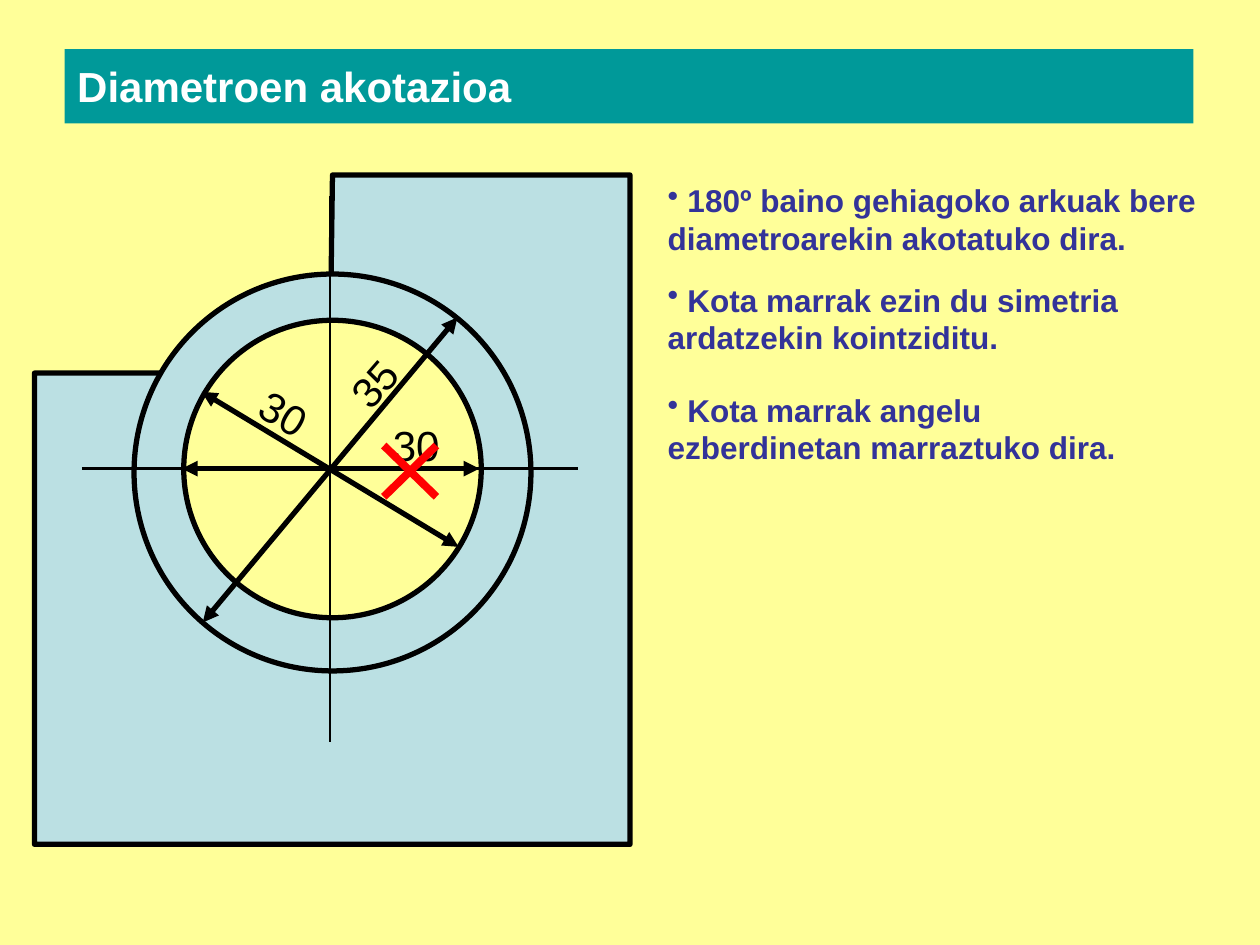
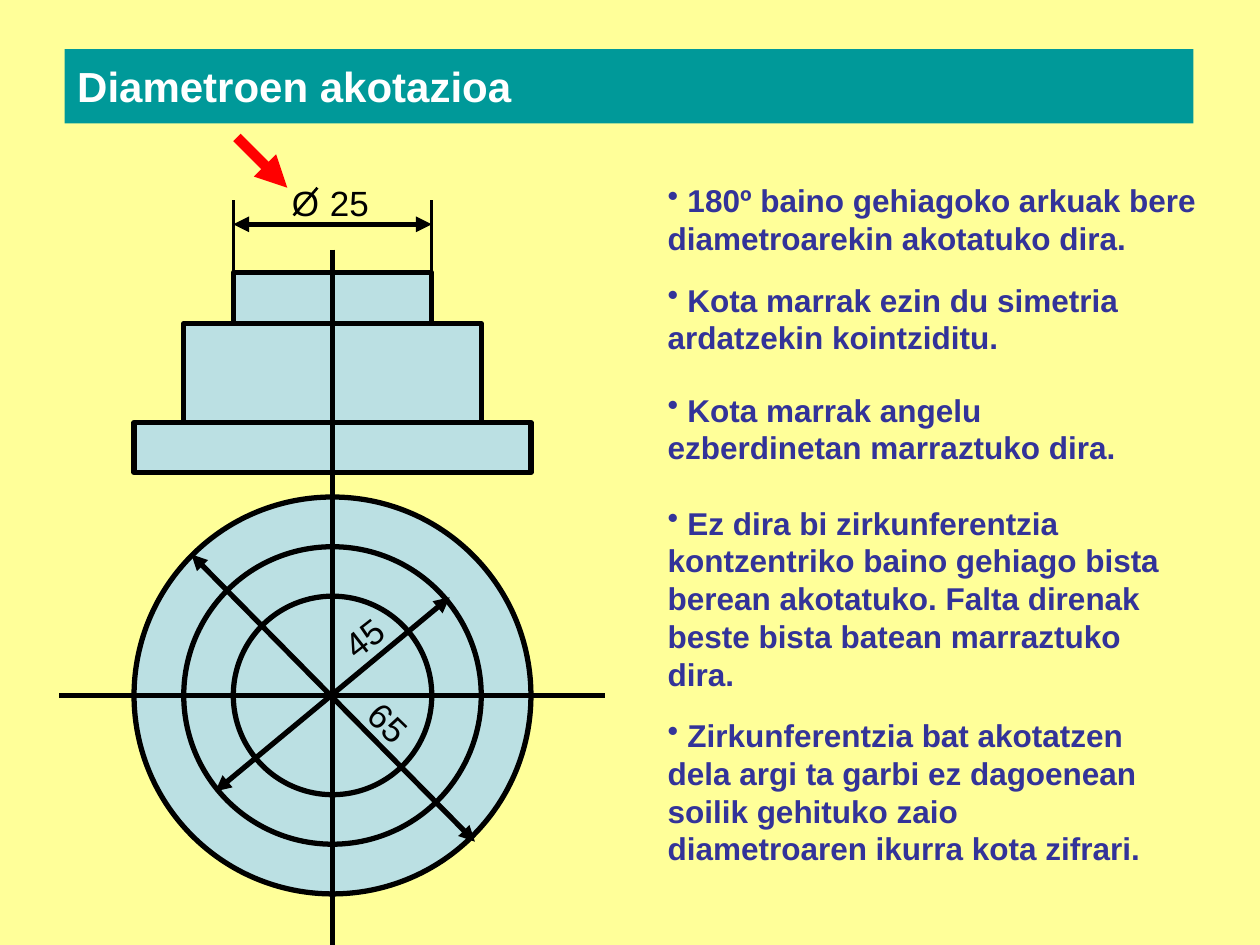
from lxml import etree
from pptx import Presentation
from pptx.dml.color import RGBColor
from pptx.enum.shapes import MSO_CONNECTOR, MSO_SHAPE
from pptx.enum.text import MSO_ANCHOR, MSO_AUTO_SIZE, PP_ALIGN
from pptx.oxml.ns import qn
from pptx.util import Pt

STRAIGHT = MSO_CONNECTOR.STRAIGHT
OVAL, RECTANGLE = MSO_SHAPE.OVAL, MSO_SHAPE.RECTANGLE
MIDDLE = MSO_ANCHOR.MIDDLE
FIT_SHAPE, NO_FIT = MSO_AUTO_SIZE.SHAPE_TO_FIT_TEXT, MSO_AUTO_SIZE.NONE
LEFT = PP_ALIGN.LEFT

CREAM = RGBColor(0xFF, 0xFF, 0x99)
TEAL = RGBColor(0x00, 0x99, 0x99)
PALE_BLUE = RGBColor(0xBB, 0xE0, 0xE3)
INDIGO = RGBColor(0x33, 0x33, 0x99)
RED = RGBColor(0xFF, 0x00, 0x00)
BLACK = RGBColor(0x00, 0x00, 0x00)
WHITE = RGBColor(0xFF, 0xFF, 0xFF)

FONT = "Arial"
THIN, THICK = 1.5, 3
TITLE = "Diametroen akotazioa"
TITLE_BAND = (36.9, 28, 645, 42.5)

# Text, top, width, height
NOTES = [
    ("180º baino gehiagoko arkuak bere diametroarekin akotatuko dira.", 100, 322.6, 51),
    ("Kota marrak ezin du simetria ardatzekin kointziditu.", 156.8, 326, 51),
    ("Kota marrak angelu ezberdinetan marraztuko dira.", 219.6, 298, 51),
    ("Ez dira bi zirkunferentzia kontzentriko baino gehiago bista berean "
     "akotatuko. Falta direnak beste bista batean marraztuko dira.", 284.2, 298, 116.6),
    ("Zirkunferentzia bat akotatzen dela argi ta garbi ez dagoenean soilik "
     "gehituko zaio diametroaren ikurra kota zifrari.", 405.6, 298, 94.4),
]
NOTES_LEFT = 374.4

# Slide 1: plate with a hole
PLATE_OUTLINE = [(188.9, 183), (190, 100), (360, 100), (360, 482.5), (19.7, 482.5),
                 (19.7, 213.2), (91, 213.2), (114.5, 225.4)]
RING = (190, 270, 226.8)  # centre x, centre y, diameter
HOLE = (190, 268, 170)
PLATE_AXES = [((188.7, 112.3), (188.7, 424)), ((46.8, 267.8), (330.5, 267.8))]
PLATE_DIMENSIONS = [((261.4, 181.4), (115.9, 355.7)),
                    ((115.2, 223.9), (262.1, 312.5)),
                    ((104, 267.8), (273.9, 267.8))]
# Text, left, top, width, height, rotation
PLATE_LABELS = [("35", 193, 200.9, 41, 36, 311),
                ("30", 141.8, 218.2, 41, 36, 30),
                ("30", 217.4, 236.2, 41, 36, 0)]
CROSS = (219.3, 254.6, 249.4, 283.9)  # left, top, right, bottom

# Slide 2: stepped turned part
PART_X, PLAN_Y = 190, 397.4
PLAN_DIAMETERS = [226.8, 170, 113.4]
STEPS_TOP = 155.6
STEPS = [(113.4, 29.4), (170, 56.6), (226.8, 28.4)]  # width, height
EXTENSION_TOP, EXTENSION_BOTTOM, SHAFT_DIMENSION_Y = 114.5, 157, 128.2
PLAN_DIMENSIONS = [((123.1, 452.2), (257, 341.3)), ((109.4, 316.8), (271.4, 481))]
PART_LABELS = [("45", 189.4, 348.5, 36.8, 31, 322),
               ("65", 203.8, 397.4, 36.8, 31, 44),
               ("25", 181.4, 100, 36.8, 31, 0),
               ("O", 159.8, 100, 30.4, 31, 0)]
DIAMETER_STROKE = ((167.8, 123.1), (181.4, 107.3))
POINTER = ((135.4, 78.5), (164.2, 107.3))
PART_AXES = [((33.8, PLAN_Y), (345.6, PLAN_Y)), ((PART_X, 142.6), (PART_X, 540))]


def points(*lengths):
    return [Pt(length) for length in lengths]


def add_span(para, text, size, colour, bold=False):
    span = para.add_run()
    span.text = text
    span.font.name, span.font.size, span.font.bold = FONT, Pt(size), bold
    span.font.color.rgb = colour


def add_page(deck):
    page = deck.slides.add_slide(deck.slide_layouts[5])
    title = page.shapes.title
    title.left, title.top, title.width, title.height = points(*TITLE_BAND)
    title.fill.solid()
    title.fill.fore_color.rgb = TEAL
    frame = title.text_frame
    frame.auto_size, frame.vertical_anchor = NO_FIT, MIDDLE
    para = frame.paragraphs[0]
    para.alignment = LEFT
    add_span(para, TITLE, 24, WHITE, bold=True)
    return page


def paint(shape, fill):
    shape.shadow.inherit = False
    shape.fill.solid()
    shape.fill.fore_color.rgb = fill
    shape.line.color.rgb = BLACK
    shape.line.width = Pt(THICK)


def add_circle(page, centre_x, centre_y, diameter, fill=PALE_BLUE):
    radius = diameter / 2
    circle = page.shapes.add_shape(
        OVAL, *points(centre_x - radius, centre_y - radius, diameter, diameter))
    paint(circle, fill)


def add_line(page, start, end, width=THICK, colour=BLACK, arrows=()):
    """Arrows names the ends with a triangle: headEnd at start, tailEnd at end."""
    line = page.shapes.add_connector(STRAIGHT, *points(*start, *end))
    line.line.color.rgb = colour
    line.line.width = Pt(width)
    outline = line.line._get_or_add_ln()
    for arrow in arrows:
        etree.SubElement(outline, qn("a:" + arrow), type="triangle")
    etree.SubElement(line._element.spPr, qn("a:effectLst"))


def add_dimension(page, start, end):
    add_line(page, start, end, arrows=("headEnd", "tailEnd"))


def add_text_box(page, left, top, width, height, wrap):
    box = page.shapes.add_textbox(*points(left, top, width, height))
    box.text_frame.word_wrap = wrap
    box.text_frame.auto_size = FIT_SHAPE
    return box


def add_label(page, size, text, left, top, width, height, rotation):
    box = add_text_box(page, left, top, width, height, False)
    box.rotation = rotation
    add_span(box.text_frame.paragraphs[0], text, size, BLACK)


def add_notes(page, notes):
    for text, top, width, height in notes:
        box = add_text_box(page, NOTES_LEFT, top, width, height, True)
        para = box.text_frame.paragraphs[0]
        add_span(para, " " + text, 18, INDIGO, bold=True)
        properties = para._p.get_or_add_pPr()
        properties.set("marL", "0")
        properties.set("indent", str(-Pt(8.64)))
        colour = etree.SubElement(properties, qn("a:buClr"))
        etree.SubElement(colour, qn("a:srgbClr"), val=str(INDIGO))
        etree.SubElement(properties, qn("a:buChar"), char="•")


def draw_plate(page):
    outline = [points(*corner) for corner in PLATE_OUTLINE]
    builder = page.shapes.build_freeform(*outline[0])
    builder.add_line_segments(outline[1:], close=True)
    paint(builder.convert_to_shape(), PALE_BLUE)
    add_circle(page, *RING)
    add_circle(page, *HOLE, fill=CREAM)
    for start, end in PLATE_AXES:
        add_line(page, start, end, THIN)
    for start, end in PLATE_DIMENSIONS:
        add_dimension(page, start, end)
    for label in PLATE_LABELS:
        add_label(page, 24, *label)
    left, top, right, bottom = CROSS
    add_line(page, (left, top), (right, bottom), 4.5, RED)
    add_line(page, (right, top), (left, bottom), 4.5, RED)


def draw_turned_part(page):
    for diameter in PLAN_DIAMETERS:
        add_circle(page, PART_X, PLAN_Y, diameter)
    top = STEPS_TOP
    for width, height in STEPS:
        step = page.shapes.add_shape(
            RECTANGLE, *points(PART_X - width / 2, top, width, height))
        paint(step, PALE_BLUE)
        top += height
    for start, end in PLAN_DIMENSIONS:
        add_dimension(page, start, end)

    shaft_radius = STEPS[0][0] / 2
    sides = (PART_X - shaft_radius, PART_X + shaft_radius)
    for side in sides:
        add_line(page, (side, EXTENSION_TOP), (side, EXTENSION_BOTTOM), THIN)
    add_dimension(page, *[(side, SHAFT_DIMENSION_Y) for side in sides])

    for label in PART_LABELS:
        add_label(page, 20, *label)
    add_line(page, *DIAMETER_STROKE, THIN)
    add_line(page, *POINTER, 6, RED, ("tailEnd",))
    for start, end in PART_AXES:
        add_line(page, start, end)


def main():
    deck = Presentation()
    deck.slide_width, deck.slide_height = points(720, 540)
    background = deck.slide_master.background.fill
    background.solid()
    background.fore_color.rgb = CREAM
    for draw, notes in ((draw_plate, NOTES[:3]), (draw_turned_part, NOTES)):
        page = add_page(deck)
        draw(page)
        add_notes(page, notes)
    deck.save("out.pptx")


if __name__ == "__main__":
    main()
